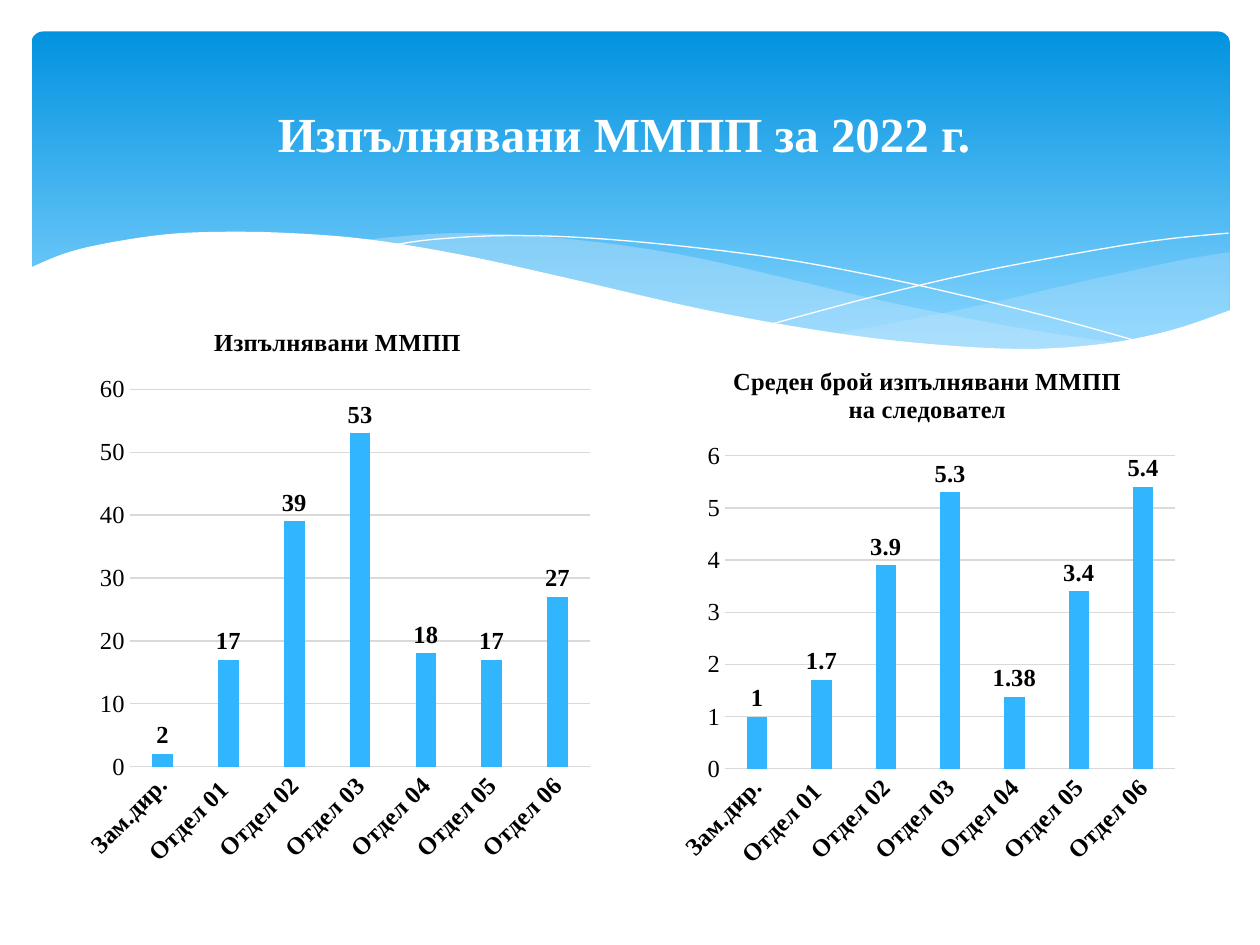
from lxml import etree
from pptx import Presentation
from pptx.chart.data import CategoryChartData
from pptx.dml.color import RGBColor
from pptx.enum import chart as kinds, shapes, text
from pptx.oxml.ns import qn
from pptx.util import Inches, Pt

WHITE = RGBColor(0xFF, 0xFF, 0xFF)
BLACK = RGBColor(0, 0, 0)
DEEP = RGBColor(0x02, 0x93, 0xE0)
SKY = RGBColor(0x83, 0xD3, 0xFE)
PALE = RGBColor(0xC6, 0xE7, 0xFC)
BLUE = RGBColor(0x31, 0xB6, 0xFD)
GRID = RGBColor(0xD9, 0xD9, 0xD9)
FACE = "Times New Roman"
UNITS = ["Зам.дир.", "Отдел 01 ", "Отдел 02", "Отдел 03",
         "Отдел 04", "Отдел 05", "Отдел 06"]

# Wave outlines: knots in inches within the banner's page area
RIGHT_TOP = [(9.76, 2), (9.35, 2.07), (8.61, 2.23), (7.79, 2.42),
             (7.06, 2.57), (6.61, 2.65)]
RIGHT_LOW = [(6.61, 2.65), (7.05, 2.71), (7.57, 2.76), (8.14, 2.78),
             (8.63, 2.75), (9.13, 2.67), (9.49, 2.57), (9.76, 2.47)]
MID_TOP = [(8.93, 2.73), (8.07, 2.6), (7.06, 2.4), (6.29, 2.22),
           (5.55, 2.05), (4.89, 1.94), (4.2, 1.87), (3.61, 1.85),
           (3.13, 1.88), (2.86, 1.91)]
MID_LOW = [(2.86, 1.91), (3.62, 2.03), (4.49, 2.22), (5.3, 2.4),
           (6.01, 2.55), (6.8, 2.68), (7.48, 2.76), (8.07, 2.78),
           (8.57, 2.77), (8.93, 2.73)]
FALL = [(3.09, 1.95), (3.44, 1.9), (4.01, 1.87), (4.69, 1.89),
        (5.56, 1.97), (6.36, 2.08), (7.27, 2.26), (8.31, 2.51), (9.07, 2.72)]
RISE = [(6.13, 2.57), (6.95, 2.35), (7.76, 2.16), (8.66, 1.99),
        (9.24, 1.9), (9.75, 1.85)]
EDGE = [(9.77, 2.46), (9.3, 2.62), (8.75, 2.73), (8.09, 2.77), (7.26, 2.72),
        (6.48, 2.62), (5.55, 2.45), (4.47, 2.2), (3.65, 2.02), (2.92, 1.9),
        (2.3, 1.85), (1.77, 1.84), (1.32, 1.86), (0.85, 1.93),
        (0.52, 2.01), (0.23, 2.13)]


def set_text(font, size=14, bold=False, color=BLACK):
    font.name, font.size, font.bold = FACE, Pt(size), bold
    font.color.rgb = color


def write(frame, words, align=text.PP_ALIGN.CENTER, **look):
    frame.text = words
    par = frame.paragraphs[0]
    par.alignment = align
    set_text(par.runs[0].font, **look)


def smooth(knots, steps=5):
    """Points of a Catmull-Rom curve through the knots."""
    ends = [knots[0], *knots, knots[-1]]
    points = [knots[0]]
    for a, b, c, d in zip(ends, ends[1:], ends[2:], ends[3:]):
        for i in range(1, steps + 1):
            t = i / steps
            points.append(tuple(
                (2 * q + (r - p) * t + (2 * p - 5 * q + 4 * r - s) * t ** 2
                 + (3 * q - p - 3 * r + s) * t ** 3) / 2
                for p, q, r, s in zip(a, b, c, d)))
    return points


def add_wave(slide, box, points, fill=None, alpha=100):
    """Filled wave, or a white hairline when no fill is given."""
    left, top = box[:2]
    spots = [(left + Inches(x), top + Inches(y)) for x, y in points]
    pen = slide.shapes.build_freeform(*spots[0], scale=1.0)
    pen.add_line_segments(spots[1:], close=fill is not None)
    wave = pen.convert_to_shape()
    wave.shadow.inherit = False
    if fill is None:
        wave.fill.background()
        wave.line.color.rgb = WHITE
        wave.line.width = Pt(0)
        return
    wave.fill.solid()
    wave.fill.fore_color.rgb = fill
    wave.line.fill.background()
    if alpha < 100:
        tone = wave.element.spPr.find(qn("a:solidFill"))[0]
        etree.SubElement(tone, qn("a:alpha")).set("val", str(alpha * 1000))


def add_banner(slide, box):
    # Gradient panel
    left, top, width, _ = box
    panel = slide.shapes.add_shape(
        shapes.MSO_SHAPE.ROUNDED_RECTANGLE, left + Inches(0.25),
        top + Inches(0.25), width - Inches(0.49), Inches(2.7))
    panel.adjustments[0] = 0.034
    panel.shadow.inherit = False
    panel.line.fill.background()
    panel.fill.gradient()
    panel.fill.gradient_angle = 270
    for stop, place, tone in zip(panel.fill.gradient_stops, (0, 0.9), (DEEP, SKY)):
        stop.position = place
        stop.color.rgb = tone
    # Waves
    add_wave(slide, box, smooth(RIGHT_TOP) + smooth(RIGHT_LOW), PALE, 29)
    add_wave(slide, box, smooth(MID_TOP) + smooth(MID_LOW), PALE, 40)
    add_wave(slide, box, smooth(FALL))
    add_wave(slide, box, smooth(RISE))
    add_wave(slide, box, smooth(EDGE) + [(0.23, 3.29), (9.77, 3.29)], WHITE)


def add_title(slide, box, words):
    title = slide.shapes.title
    title.left, title.top, title.width, title.height = box
    write(title.text_frame, words, size=28, bold=True, color=WHITE)
    title.text_frame.vertical_anchor = text.MSO_ANCHOR.MIDDLE
    slide.shapes.element.append(title.element)  # in front of the banner


def add_bars(slide, box, head, values, top, step):
    data = CategoryChartData()
    data.categories = UNITS
    data.add_series("Series 1", values)
    chart = slide.shapes.add_chart(
        kinds.XL_CHART_TYPE.COLUMN_CLUSTERED, *box, data).chart
    set_text(chart.font)
    chart.has_legend = False
    chart.has_title = True
    write(chart.chart_title.text_frame, head, bold=True)
    chart.chart_title.include_in_layout = False
    # Bars and labels
    plot = chart.plots[0]
    plot.gap_width, plot.overlap, plot.vary_by_categories = 219, -27, False
    bars = plot.series[0]
    bars.format.fill.solid()
    bars.format.fill.fore_color.rgb = BLUE
    plot.has_data_labels = True
    tags = plot.data_labels
    tags.show_value = True
    tags.position = kinds.XL_LABEL_POSITION.OUTSIDE_END
    set_text(tags.font, bold=True)
    # Axes
    cats, vals = chart.category_axis, chart.value_axis
    for axis in (cats, vals):
        axis.major_tick_mark = axis.minor_tick_mark = kinds.XL_TICK_MARK.NONE
        set_text(axis.tick_labels.font, bold=axis is cats)
    chart.element.xpath(".//c:catAx/c:txPr/a:bodyPr")[0].set("rot", "-2700000")
    vals.minimum_scale, vals.maximum_scale, vals.major_unit = 0, top, step
    vals.has_major_gridlines = True
    vals.format.line.fill.background()
    for line in (cats.format.line, vals.major_gridlines.format.line):
        line.color.rgb = GRID
        line.width = Pt(0.75)


def inches(*sizes):
    return [Inches(size) for size in sizes]


def main():
    deck = Presentation()
    deck.slide_width, deck.slide_height = inches(10, 7.5)
    slide = deck.slides.add_slide(deck.slide_layouts[5])
    add_banner(slide, inches(0, 0, 10, 3.29))
    add_title(slide, inches(0.5, 0.37, 9, 1.37), "Изпълнявани ММПП за 2022 г. ")
    add_bars(slide, inches(0.59, 2.41, 4.18, 4.56), "Изпълнявани ММПП",
             [2, 17, 39, 53, 18, 17, 27], top=60, step=10)
    add_bars(slide, inches(5.31, 2.73, 4.1, 4.25),
             "Среден брой изпълнявани ММПП на следовател",
             [1, 1.7, 3.9, 5.3, 1.38, 3.4, 5.4], top=6, step=1)
    deck.save("out.pptx")


if __name__ == "__main__":
    main()
